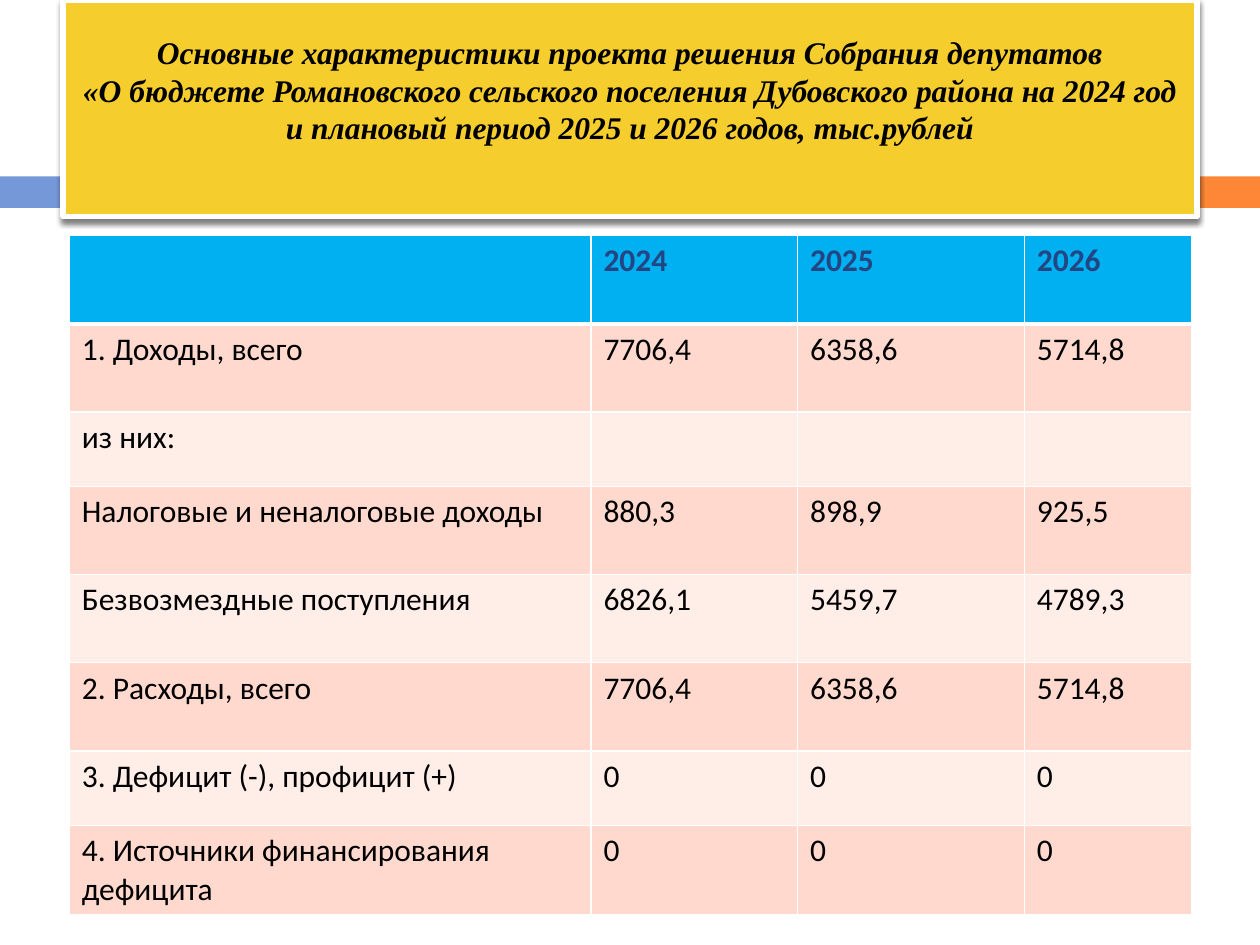
import pptx
import pptx.dml.color
import pptx.enum.shapes
import pptx.enum.text
import pptx.oxml
import pptx.oxml.ns
import pptx.util
from pptx.util import Inches

COLORS = {
    "blue": "7598D9", "orange": "FE8637", "yellow": "F5CD2D",
    "white": "FFFFFF", "black": "000000", "navy": "244583",
    "header": "00B0F0", "dark_band": "FFD9CE", "light_band": "FFEDE8",
}
NS = pptx.oxml.ns.nsdecls("a")

HEADING = (
    "Основные характеристики проекта решения Собрания депутатов\v"
    "«О бюджете Романовского сельского поселения Дубовского района на 2024 год "
    "и плановый период 2025 и 2026 годов, тыс.рублей"
)
BUDGET = [
    ["", "2024", "2025", "2026"],
    ["1. Доходы, всего", "7706,4", "6358,6", "5714,8"],
    ["из них:", "", "", ""],
    ["Налоговые и неналоговые доходы", "880,3", "898,9", "925,5"],
    ["Безвозмездные поступления", "6826,1", "5459,7", "4789,3"],
    ["2. Расходы, всего", "7706,4", "6358,6", "5714,8"],
    ["3. Дефицит (-), профицит (+)", "0", "0", "0"],
    ["4. Источники финансирования дефицита", "0", "0", "0"],
]
COLUMN_WIDTHS = [4.14, 1.64, 1.8, 1.33]
ROW_HEIGHTS = [0.7, 0.7, 0.59, 0.7, 0.7, 0.7, 0.59, 0.7]


def rgb(name):
    return pptx.dml.color.RGBColor.from_string(COLORS[name])


def write(frame, text, font="Calibri", size=18, color="black",
          bold=False, italic=False, align=None):
    paragraph = frame.paragraphs[0]
    paragraph.text = text
    paragraph.alignment = align
    for run in paragraph.runs:
        run.font.name = font
        run.font.size = pptx.util.Pt(size)
        run.font.color.rgb = rgb(color)
        run.font.bold = bold
        run.font.italic = italic


class BudgetSlide:
    def __init__(self, deck):
        self.slide = deck.slides.add_slide(deck.slide_layouts[5])

    def bar(self, left, top, width, height, color):
        band = self.slide.shapes.add_shape(
            pptx.enum.shapes.MSO_SHAPE.RECTANGLE,
            Inches(left), Inches(top), Inches(width), Inches(height))
        band.shadow.inherit = False
        band.fill.solid()
        band.fill.fore_color.rgb = rgb(color)
        band.line.fill.background()

    def title(self, text, left, top, width, height):
        heading = self.slide.shapes.title
        heading.left, heading.top = Inches(left), Inches(top)
        heading.width, heading.height = Inches(width), Inches(height)
        heading.fill.solid()
        heading.fill.fore_color.rgb = rgb("yellow")
        heading.line.color.rgb = rgb("white")
        heading.line.width = pptx.util.Pt(3)
        heading.element.spPr.append(pptx.oxml.parse_xml(
            f'<a:effectLst {NS}><a:outerShdw blurRad="38100" dist="25400" '
            f'dir="5400000" rotWithShape="0"><a:srgbClr val="{COLORS["black"]}">'
            '<a:alpha val="50000"/></a:srgbClr></a:outerShdw></a:effectLst>'))
        frame = heading.text_frame
        frame.auto_size = pptx.enum.text.MSO_AUTO_SIZE.NONE
        frame.word_wrap = True
        frame.vertical_anchor = pptx.enum.text.MSO_ANCHOR.MIDDLE
        frame.margin_bottom = Inches(0.35)
        write(frame, text, font="Times New Roman", bold=True, italic=True,
              align=pptx.enum.text.PP_ALIGN.CENTER)
        heading.element.getparent().append(heading.element)

    def borders(self, cell, top=1, bottom=1):
        properties = cell._tc.get_or_add_tcPr()
        for side, points in (("L", 1), ("R", 1), ("T", top), ("B", bottom)):
            properties.append(pptx.oxml.parse_xml(
                f'<a:ln{side} {NS} w="{pptx.util.Pt(points)}"><a:solidFill>'
                f'<a:srgbClr val="{COLORS["white"]}"/></a:solidFill></a:ln{side}>'))

    def table(self, rows, left, top, widths, heights):
        budget = self.slide.shapes.add_table(
            len(rows), len(widths), Inches(left), Inches(top),
            Inches(sum(widths)), Inches(sum(heights))).table
        for column, width in zip(budget.columns, widths):
            column.width = Inches(width)
        for index, (values, height) in enumerate(zip(rows, heights)):
            budget.rows[index].height = Inches(height)
            is_header = index == 0
            band = "header" if is_header else ("light_band", "dark_band")[index % 2]
            for cell, value in zip(budget.rows[index].cells, values):
                self.borders(cell, top=3 if index == 1 else 1,
                             bottom=3 if is_header else 1)
                cell.fill.solid()
                cell.fill.fore_color.rgb = rgb(band)
                write(cell.text_frame, value, bold=is_header,
                      color="navy" if is_header else "black")


def main():
    deck = pptx.Presentation()
    deck.slide_width, deck.slide_height = Inches(10), Inches(7.5)
    page = BudgetSlide(deck)
    page.bar(0, 1.4, 0.58, 0.25, "blue")
    page.bar(0.65, 1.4, 9.35, 0.25, "orange")
    page.title(HEADING, 0.5, 0, 9, 1.72)
    page.table(BUDGET, 0.55, 1.87, COLUMN_WIDTHS, ROW_HEIGHTS)
    deck.save("out.pptx")


if __name__ == "__main__":
    main()
